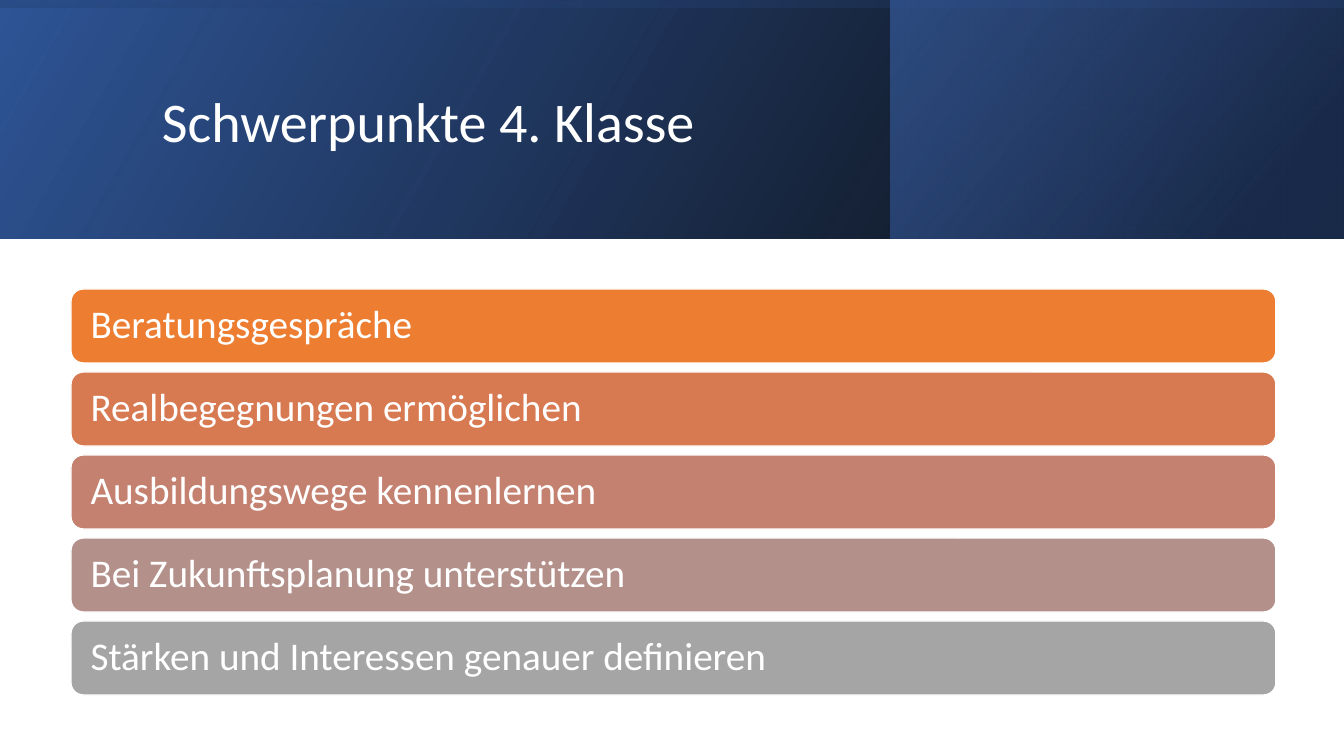
from pptx import Presentation
from pptx.dml.color import RGBColor
from pptx.enum.shapes import MSO_SHAPE
from pptx.enum.text import MSO_ANCHOR, MSO_AUTO_SIZE, PP_ALIGN
from pptx.oxml import parse_xml
from pptx.oxml.ns import nsdecls
from pptx.util import Pt

RECTANGLE = MSO_SHAPE.RECTANGLE
ROUNDED = MSO_SHAPE.ROUNDED_RECTANGLE
MIDDLE = MSO_ANCHOR.MIDDLE
NO_AUTOFIT = MSO_AUTO_SIZE.NONE
LEFT = PP_ALIGN.LEFT

EMU_PER_PX = 914400 / 100.8
PAGE_WIDTH, PAGE_HEIGHT = 1344, 756
HEADER_HEIGHT = 239
TITLE_ONLY = 5

COLORS = {
    "white": "FFFFFF",
    "black": "000000",
    "blue": "4472C4",
    "deep_blue": "2F5597",
    "navy": "203864",
    "orange": "ED7D31",
    "terracotta": "D87A51",
    "rose": "C48170",
    "mauve": "B4908B",
    "gray": "A5A5A5",
}

# Box, rotation, gradient angle and stops (position %, colour, opacity %)
HEADER_LAYERS = [
    ((0, 0, PAGE_WIDTH, HEADER_HEIGHT), 0, 330,
     [(0, "black", 96), (100, "deep_blue", 100)]),
    ((891, 0, 452, HEADER_HEIGHT), 0, 320,
     [(19, "navy", 68), (100, "blue", 48)]),
    ((552, -552, HEADER_HEIGHT, PAGE_WIDTH), 270, 350,
     [(23, "deep_blue", 16), (99, "black", 45)]),
]

TOPICS = [
    ("Beratungsgespräche", "orange"),
    ("Realbegegnungen ermöglichen", "terracotta"),
    ("Ausbildungswege kennenlernen", "rose"),
    ("Bei Zukunftsplanung unterstützen", "mauve"),
    ("Stärken und Interessen genauer definieren", "gray"),
]
BAR_LEFT, BAR_TOP, BAR_WIDTH, BAR_HEIGHT = 71, 289, 1205, 74
BAR_PITCH = 83


def px(length):
    return round(length * EMU_PER_PX)


def rgb(name):
    return RGBColor.from_string(COLORS[name])


def write_text(frame, text, size, color="white", font="Calibri", inset=10):
    frame.auto_size = NO_AUTOFIT
    frame.word_wrap = True
    frame.vertical_anchor = MIDDLE
    frame.margin_left = frame.margin_right = px(inset)
    frame.margin_top = frame.margin_bottom = px(5)
    para = frame.paragraphs[0]
    para.alignment = LEFT
    para.line_spacing = 0.9
    span = para.add_run()
    span.text = text
    span.font.name = font
    span.font.size = Pt(size)
    span.font.color.rgb = rgb(color)


class SlideBuilder:
    def __init__(self, deck):
        self.page = deck.slides.add_slide(deck.slide_layouts[TITLE_ONLY])

    def shape(self, kind, box):
        shape = self.page.shapes.add_shape(kind, *map(px, box))
        shape.shadow.inherit = False
        return shape

    def gradient_layer(self, box, rotation, angle, stops):
        """Add a mirrored rectangle with a translucent linear gradient."""
        layer = self.shape(RECTANGLE, box)
        layer.rotation = rotation
        layer.line.fill.background()
        properties = layer._element.spPr
        properties.xfrm.set("flipH", "1")
        stop_xml = "".join(
            f'<a:gs pos="{position * 1000}"><a:srgbClr val="{COLORS[color]}">'
            f'<a:alpha val="{opacity * 1000}"/></a:srgbClr></a:gs>'
            for position, color, opacity in stops
        )
        properties.prstGeom.addnext(parse_xml(
            f'<a:gradFill {nsdecls("a")} rotWithShape="1">'
            f'<a:gsLst>{stop_xml}</a:gsLst>'
            f'<a:lin ang="{angle * 60000}" scaled="0"/></a:gradFill>'
        ))

    def title(self, text, box):
        """Format the title placeholder and bring it to the front."""
        title = self.page.shapes.title
        title.left, title.top, title.width, title.height = map(px, box)
        write_text(title.text_frame, text, size=40)
        self.page.shapes._spTree.append(title._element)

    def bar(self, text, color, box):
        bar = self.shape(ROUNDED, box)
        bar.fill.solid()
        bar.fill.fore_color.rgb = rgb(color)
        bar.line.color.rgb = rgb("white")
        bar.line.width = Pt(1)
        write_text(bar.text_frame, text, size=28, inset=16)


def main():
    deck = Presentation()
    deck.slide_width, deck.slide_height = px(PAGE_WIDTH), px(PAGE_HEIGHT)
    builder = SlideBuilder(deck)
    for layer in HEADER_LAYERS:
        builder.gradient_layer(*layer)
    builder.title("Schwerpunkte 4. Klasse", (152, 38, 1072, 173))
    for index, (text, color) in enumerate(TOPICS):
        top = BAR_TOP + index * BAR_PITCH
        builder.bar(text, color, (BAR_LEFT, top, BAR_WIDTH, BAR_HEIGHT))
    deck.save("out.pptx")


if __name__ == "__main__":
    main()
